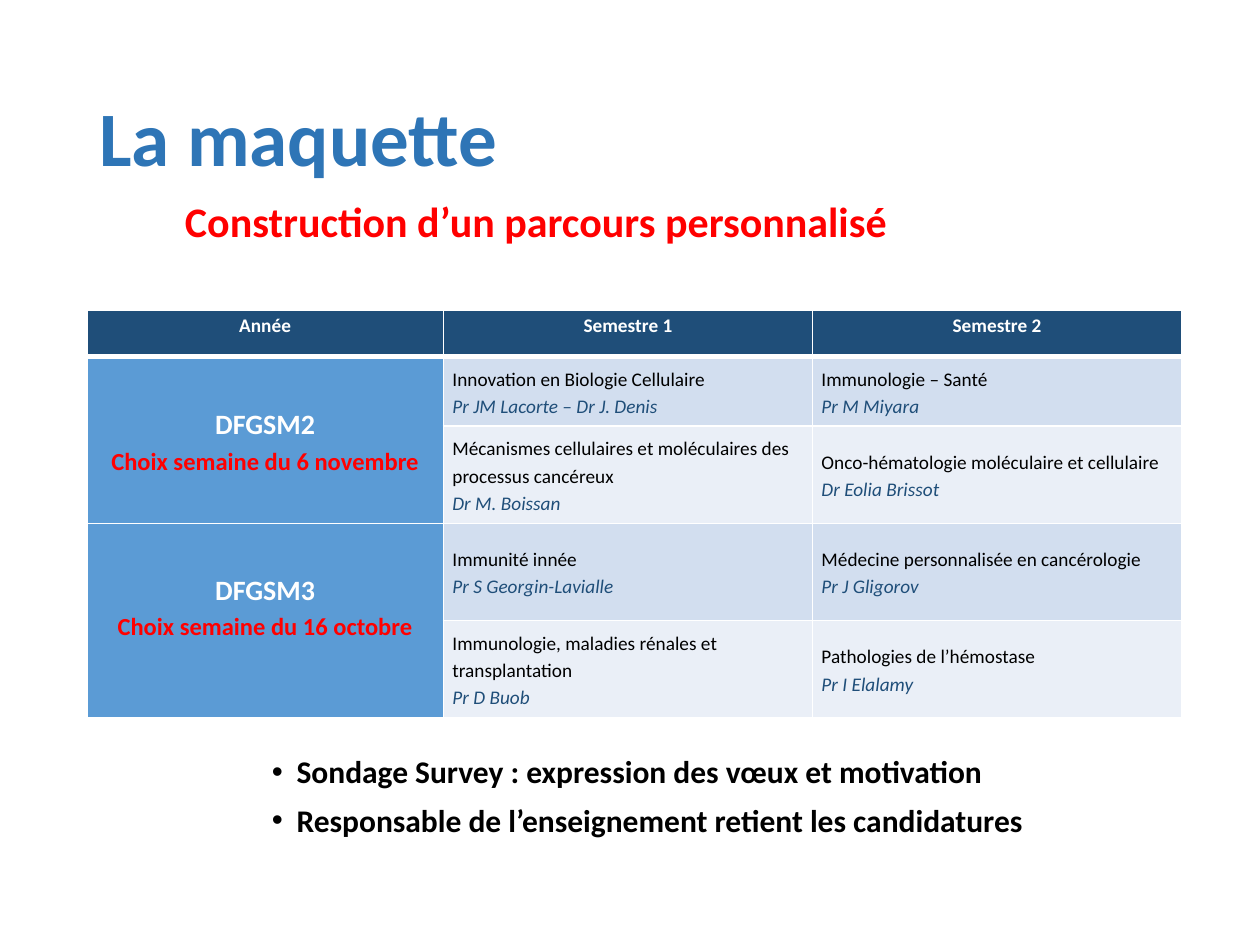
import pptx
import pptx.dml.color
import pptx.enum.text
import pptx.oxml
import pptx.oxml.ns
import pptx.util
from pptx.util import Cm, Pt

ALIGN = pptx.enum.text.PP_ALIGN
MIDDLE = pptx.enum.text.MSO_ANCHOR.MIDDLE
FIT = pptx.enum.text.MSO_AUTO_SIZE.SHAPE_TO_FIT_TEXT
NS = pptx.oxml.ns.nsdecls("a")
NAVY, RED, WHITE, BLACK = "1F4E79", "FF0000", "FFFFFF", "000000"


def rgb(value):
    return pptx.dml.color.RGBColor.from_string(value)


def format_runs(paragraph, size, color, bold=False, italic=False):
    for run in paragraph.runs:
        run.font.name = "Calibri"
        run.font.size = Pt(size)
        run.font.bold = bold
        run.font.italic = italic
        run.font.color.rgb = rgb(color)


deck = pptx.Presentation()
deck.slide_width, deck.slide_height = Cm(25.4), Cm(19.05)
slide = deck.slides.add_slide(deck.slide_layouts[5])

title = slide.shapes.title
title.left, title.top, title.width, title.height = Cm(1.75), Cm(1.02), Cm(21.9), Cm(3.68)
title.text_frame.text = "La maquette"
title.text_frame.vertical_anchor = MIDDLE
heading = title.text_frame.paragraphs[0]
heading.alignment = ALIGN.LEFT
heading.line_spacing = 0.9
format_runs(heading, 44, "2E75B6", bold=True)

rows = [
    ["Année", "Semestre 1", "Semestre 2"],
    ["DFGSM2\nChoix semaine du 6 novembre",
     "Innovation en Biologie Cellulaire\nPr JM Lacorte – Dr J. Denis",
     "Immunologie – Santé\nPr M Miyara"],
    ["",
     "Mécanismes cellulaires et moléculaires des processus cancéreux\nDr M. Boissan",
     "Onco-hématologie moléculaire et cellulaire\nDr Eolia Brissot"],
    ["DFGSM3\nChoix semaine du 16 octobre",
     "Immunité innée\nPr S Georgin-Lavialle",
     "Médecine personnalisée en cancérologie\nPr J Gligorov"],
    ["",
     "Immunologie, maladies rénales et transplantation\nPr D Buob",
     "Pathologies de l’hémostase\nPr I Elalamy"],
]
courses = slide.shapes.add_table(5, 3, Cm(1.75), Cm(6.25), Cm(22.07), Cm(8.22)).table
for column, width in zip(courses.columns, (7.19, 7.44, 7.44)):
    column.width = Cm(width)
for row, height in zip(courses.rows, (0.94, 1.4, 1.96, 1.96, 1.96)):
    row.height = Cm(height)

for r, texts in enumerate(rows):
    for c, text in enumerate(texts):
        cell = courses.cell(r, c)
        cell.margin_left = cell.margin_right = Cm(0.18)
        cell.margin_top = cell.margin_bottom = 0
        cell.text_frame.text = text
        if r == 0:
            fill, styles = NAVY, [(11, WHITE, True, False)]
        elif c == 0:
            fill, styles = "5B9BD5", [(16, WHITE, True, False), (14, RED, True, False)]
        else:
            fill = "D2DEEF" if r % 2 else "EAEFF7"
            styles = [(11, BLACK, False, False), (11, NAVY, False, True)]
        if r > 0:
            cell.vertical_anchor = MIDDLE
        for paragraph, style in zip(cell.text_frame.paragraphs, styles):
            paragraph.alignment = ALIGN.CENTER if r == 0 or c == 0 else ALIGN.LEFT
            paragraph.line_spacing = 1.15
            format_runs(paragraph, *style)
        cell.fill.solid()
        cell.fill.fore_color.rgb = rgb(fill)
        borders = cell._tc.get_or_add_tcPr()
        for position, side in enumerate("LRTB"):
            thick = (r, side) in ((0, "B"), (1, "T"))
            borders.insert(position, pptx.oxml.parse_xml(
                f'<a:ln{side} {NS} w="{Pt(3 if thick else 1)}"><a:solidFill>'
                f'<a:srgbClr val="{WHITE}"/></a:solidFill></a:ln{side}>'))

for first in (1, 3):
    courses.cell(first, 0).merge(courses.cell(first + 1, 0))
courses.cell(3, 0).margin_bottom = Cm(0.6)

subtitle = slide.shapes.add_textbox(Cm(3.48), Cm(3.81), Cm(14.81), Cm(1.27)).text_frame
subtitle.word_wrap = False
subtitle.auto_size = FIT
subtitle.text = "Construction d’un parcours personnalisé"
format_runs(subtitle.paragraphs[0], 24, RED, bold=True)

steps = slide.shapes.add_textbox(Cm(5.23), Cm(15.04), Cm(15.98), Cm(2.01)).text_frame
steps.word_wrap = False
steps.auto_size = FIT
steps.text = ("Sondage Survey : expression des vœux et motivation\n"
              "Responsable de l’enseignement retient les candidatures")
for number, step in enumerate(steps.paragraphs):
    bullet = step._p.get_or_add_pPr()
    bullet.set("marL", str(Cm(0.5)))
    bullet.set("indent", str(-Cm(0.5)))
    bullet.append(pptx.oxml.parse_xml(f'<a:buFont {NS} typeface="Arial"/>'))
    bullet.append(pptx.oxml.parse_xml(f'<a:buChar {NS} char="•"/>'))
    if number > 0:
        step.space_before = Pt(6)
    format_runs(step, 18, BLACK, bold=True)

deck.save("out.pptx")
